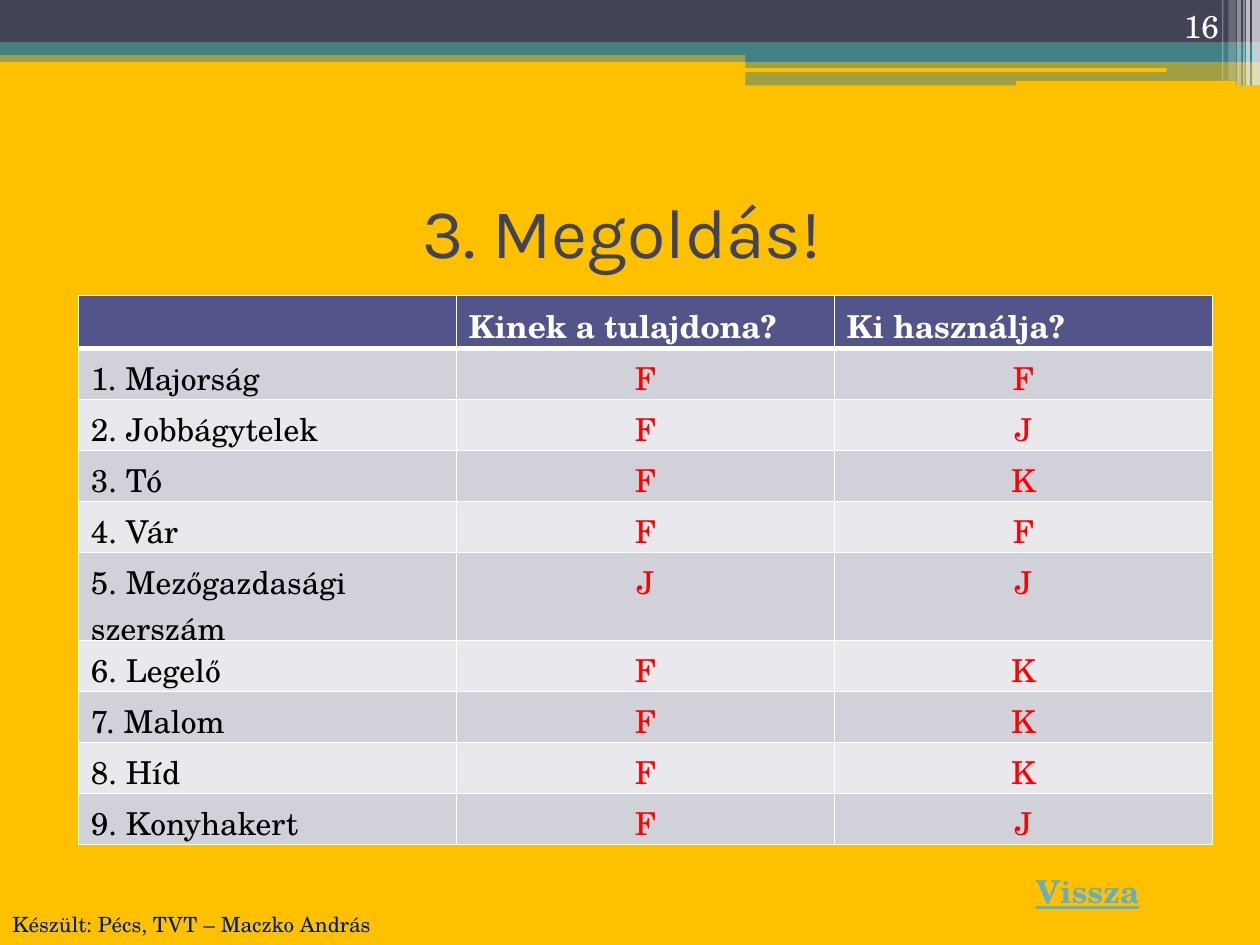
from lxml import etree
from pptx import Presentation
from pptx.dml.color import RGBColor
from pptx.enum.shapes import MSO_SHAPE
from pptx.enum.text import MSO_ANCHOR, PP_ALIGN
from pptx.oxml.ns import qn
from pptx.util import Pt

RECT, ROUNDED = MSO_SHAPE.RECTANGLE, MSO_SHAPE.ROUNDED_RECTANGLE
LEFT, CENTER, RIGHT = PP_ALIGN.LEFT, PP_ALIGN.CENTER, PP_ALIGN.RIGHT
TOP, MIDDLE, BOTTOM = MSO_ANCHOR.TOP, MSO_ANCHOR.MIDDLE, MSO_ANCHOR.BOTTOM

GOLD = RGBColor(0xFF, 0xC0, 0x00)
SLATE = RGBColor(0x42, 0x44, 0x56)
TEAL = RGBColor(0x43, 0x80, 0x86)
WHITE = RGBColor(0xFF, 0xFF, 0xFF)
BLACK = RGBColor(0x00, 0x00, 0x00)
RED = RGBColor(0xFF, 0x00, 0x00)
NAVY = RGBColor(0x00, 0x20, 0x60)
LINK_BLUE = RGBColor(0x67, 0xAF, 0xBD)
HEADER_PURPLE = RGBColor(0x53, 0x54, 0x8A)
BAND_DARK = RGBColor(0xD1, 0xD1, 0xDA)
BAND_LIGHT = RGBColor(0xE9, 0xE9, 0xED)

HEADING_FONT = "Karla"
BODY_FONT = "TeX Gyre Schola"


def style_text(paragraph, size, color, align=LEFT, font_name=BODY_FONT, bold=False):
    paragraph.alignment = align
    font = paragraph.font
    font.name, font.size, font.bold = font_name, Pt(size), bold
    font.color.rgb = color


def set_borders(cell, top, bottom):
    """Draw white cell borders; top and bottom are widths in points."""
    properties = cell._tc.get_or_add_tcPr()
    for side, width in (("L", 1), ("R", 1), ("T", top), ("B", bottom)):
        line = etree.SubElement(properties, qn(f"a:ln{side}"), w=str(Pt(width)))
        fill = etree.SubElement(line, qn("a:solidFill"))
        etree.SubElement(fill, qn("a:srgbClr"), val=str(WHITE))


prs = Presentation()
prs.slide_width, prs.slide_height = Pt(720), Pt(540)
slide = prs.slides.add_slide(prs.slide_layouts[5])
slide.background.fill.solid()
slide.background.fill.fore_color.rgb = GOLD

# Header bands and the stripes at the right edge: outline, box, colour, opacity %
decorations = [
    (RECT, 0, 28.8, 720, 6.6, TEAL, 50),
    (RECT, 0, 0, 720, 24.4, SLATE, 100),
    (RECT, 0, 24.2, 720, 7.2, TEAL, 100),
    (RECT, 426, 28.2, 294, 7.2, TEAL, 100),
    (RECT, 426, 34.6, 294, 14.2, TEAL, 50),
    (ROUNDED, 425.5, 39, 241.2, 2.2, GOLD, 100),
    (ROUNDED, 580.5, 46.2, 126, 2.8, GOLD, 100),
    (RECT, 715.5, 0, 4.5, 48.8, WHITE, 65),
    (RECT, 712, 0, 2.2, 48.8, WHITE, 65),
    (RECT, 710.5, 0, 0.75, 48.8, WHITE, 60),
    (RECT, 707, 0, 2.2, 48.8, WHITE, 40),
    (RECT, 702, 0, 4.3, 46.1, WHITE, 20),
    (RECT, 698.4, 0, 0.75, 46.1, WHITE, 30),
]
for outline, left, top, width, height, color, opacity in decorations:
    band = slide.shapes.add_shape(outline, Pt(left), Pt(top), Pt(width), Pt(height))
    band.shadow.inherit = False
    band.line.fill.background()
    band.fill.solid()
    band.fill.fore_color.rgb = color
    if opacity < 100:
        shade = band.fill._xPr.find(f".//{qn('a:srgbClr')}")
        etree.SubElement(shade, qn("a:alpha"), val=str(opacity * 1000))

title = slide.shapes.title
title.left, title.top, title.width, title.height = Pt(36), Pt(90), Pt(648), Pt(84)
title.text_frame.text = "3. Megoldás! "
title.text_frame.vertical_anchor = MIDDLE
style_text(title.text_frame.paragraphs[0], 40, SLATE, CENTER, HEADING_FONT)

answers = [
    ("", "Kinek a tulajdona?", "Ki használja?"),
    ("1. Majorság", "F", "F"),
    ("2. Jobbágytelek", "F", "J"),
    ("3. Tó", "F", "K"),
    ("4. Vár", "F", "F"),
    ("5. Mezőgazdasági szerszám", "J", "J"),
    ("6. Legelő", "F", "K"),
    ("7. Malom", "F", "K"),
    ("8. Híd", "F", "K"),
    ("9. Konyhakert", "F", "J"),
]
TWO_LINE_ROW = 5
table_frame = slide.shapes.add_table(len(answers), 3, Pt(44.75), Pt(168.75), Pt(648), Pt(312.5))
table = table_frame.table
for r, row in enumerate(answers):
    table.rows[r].height = Pt(50.3 if r == TWO_LINE_ROW else 29.15)
    for c, text in enumerate(row):
        cell = table.cell(r, c)
        cell.text = text
        # Rows are tighter than the font's tall line box
        cell.margin_bottom = Pt(-6.3 if r == TWO_LINE_ROW else -1)
        paragraph = cell.text_frame.paragraphs[0]
        set_borders(cell, top=3 if r == 1 else 1, bottom=3 if r == 0 else 1)
        cell.fill.solid()
        if r == 0:
            cell.fill.fore_color.rgb = HEADER_PURPLE
            style_text(paragraph, 18, WHITE, bold=True)
        else:
            cell.fill.fore_color.rgb = BAND_DARK if r % 2 else BAND_LIGHT
            style_text(paragraph, 18, RED if c else BLACK, CENTER if c else LEFT)

# Back link, slide number and author: text, box, size, colour, align, anchor, bold, wrap
captions = [
    ("Vissza", 585, 495, 74, 29, 18, LINK_BLUE, LEFT, TOP, True, False),
    ("16", 643.5, 0, 60, 29, 18, WHITE, RIGHT, BOTTOM, False, True),
    ("Készült: Pécs, TVT – Maczko András", 0, 517.5, 376.5, 21.8, 12, NAVY, LEFT, TOP, False, True),
]
for text, left, top, width, height, size, color, align, anchor, bold, wrap in captions:
    caption = slide.shapes.add_textbox(Pt(left), Pt(top), Pt(width), Pt(height)).text_frame
    caption.text = text
    caption.word_wrap = wrap
    caption.vertical_anchor = anchor
    style_text(caption.paragraphs[0], size, color, align, bold=bold)
    caption.paragraphs[0].font.underline = text == "Vissza"

prs.save("out.pptx")
